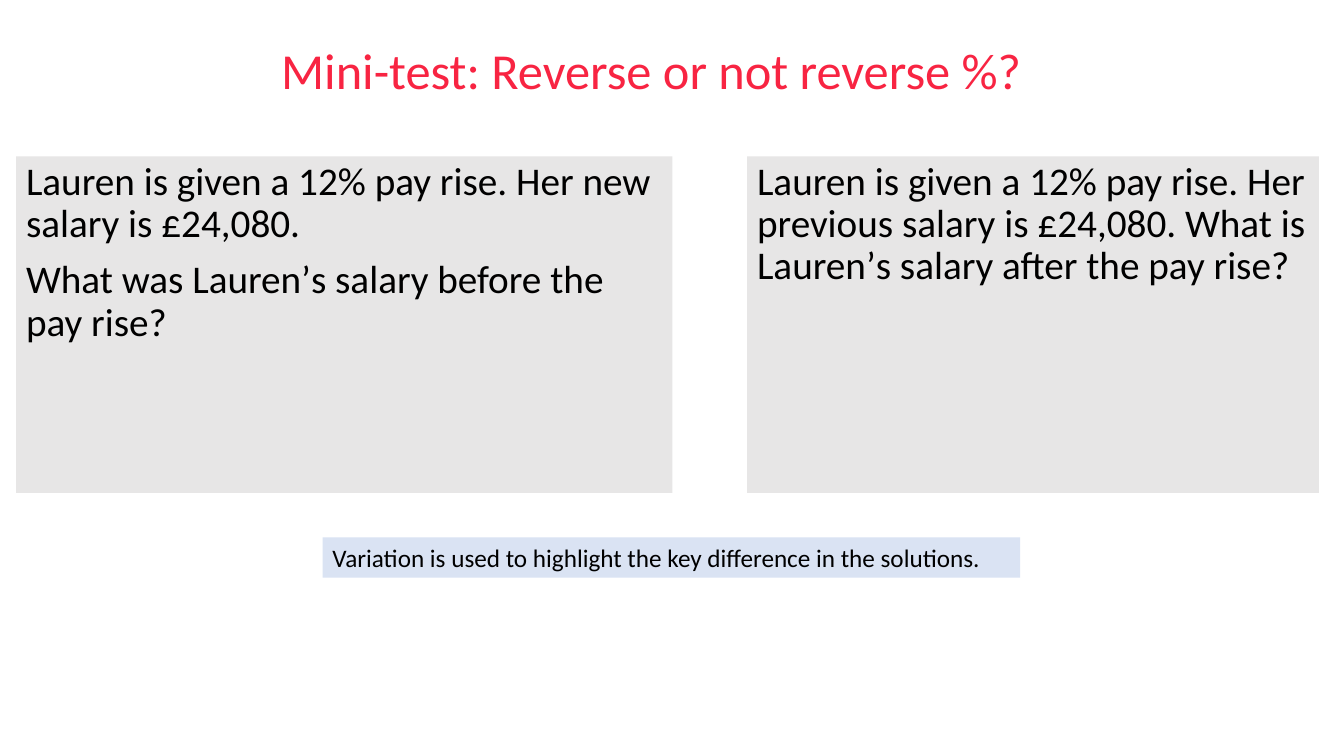
from pptx import Presentation
from pptx.dml.color import RGBColor
from pptx.enum.shapes import MSO_SHAPE
from pptx.enum.text import MSO_ANCHOR, PP_ALIGN
from pptx.util import Inches, Pt

RECT = MSO_SHAPE.RECTANGLE
TOP, MIDDLE = MSO_ANCHOR.TOP, MSO_ANCHOR.MIDDLE
LEFT, CENTER = PP_ALIGN.LEFT, PP_ALIGN.CENTER
WIDTH, HEIGHT = Inches(13.33), Inches(7.5)
FONT = "Calibri"
RED, BLACK, GREY, BLUE = "F82442", "000000", "E7E6E6", "DAE3F3"


def color(code):
    """Turn a hex string into a colour."""
    return RGBColor.from_string(code)


def place(left, top, width, height):
    """Turn percentages of the slide into a position and size."""
    return [int(share * full / 100) for share, full in
            zip((left, top, width, height), (WIDTH, HEIGHT) * 2)]


def write(shape, text, size=28, ink=BLACK, align=LEFT, anchor=TOP, lead=0.9):
    """Write each line of the text as one paragraph of the shape."""
    frame = shape.text_frame
    frame.word_wrap = True
    frame.vertical_anchor = anchor
    frame.text = text
    for index, para in enumerate(frame.paragraphs):
        para.alignment = align
        para.line_spacing = lead
        para.space_before = Pt(10 if index else 0)
        para.font.name = FONT
        para.font.size = Pt(size)
        para.font.color.rgb = color(ink)


def title(slide, text, box):
    """Add the centred slide heading."""
    write(slide.shapes.add_textbox(*place(*box)), text, size=36, ink=RED,
          align=CENTER, anchor=MIDDLE)


def panel(slide, text, box, fill, **form):
    """Add a filled rectangle with text."""
    shape = slide.shapes.add_shape(RECT, *place(*box))
    shape.shadow.inherit = False
    shape.fill.solid()
    shape.fill.fore_color.rgb = color(fill)
    shape.line.fill.background()
    write(shape, text, **form)


def main():
    """Build and save the slide."""
    deck = Presentation()
    deck.slide_width, deck.slide_height = WIDTH, HEIGHT
    slide = deck.slides.add_slide(deck.slide_layouts[6])
    title(slide, "Mini-test: Reverse or not reverse %?",
          (5.33, 0, 86.27, 19.33))
    tests = [
        (1.2, 48.84, "Lauren is given a 12% pay rise. Her new salary is "
         "£24,080.\nWhat was Laurenʼs salary before the pay rise?"),
        (55.59, 42.54, "Lauren is given a 12% pay rise. Her previous salary "
         "is £24,080. What is Laurenʼs salary after the pay rise?"),
    ]
    for left, width, text in tests:
        panel(slide, text, (left, 20.67, width, 44.53), GREY)
    panel(slide, "Variation is used to highlight the key difference in the "
          "solutions.", (24, 71.07, 51.91, 5.33), BLUE, size=18, lead=1.0)
    deck.save("out.pptx")


if __name__ == "__main__":
    main()
